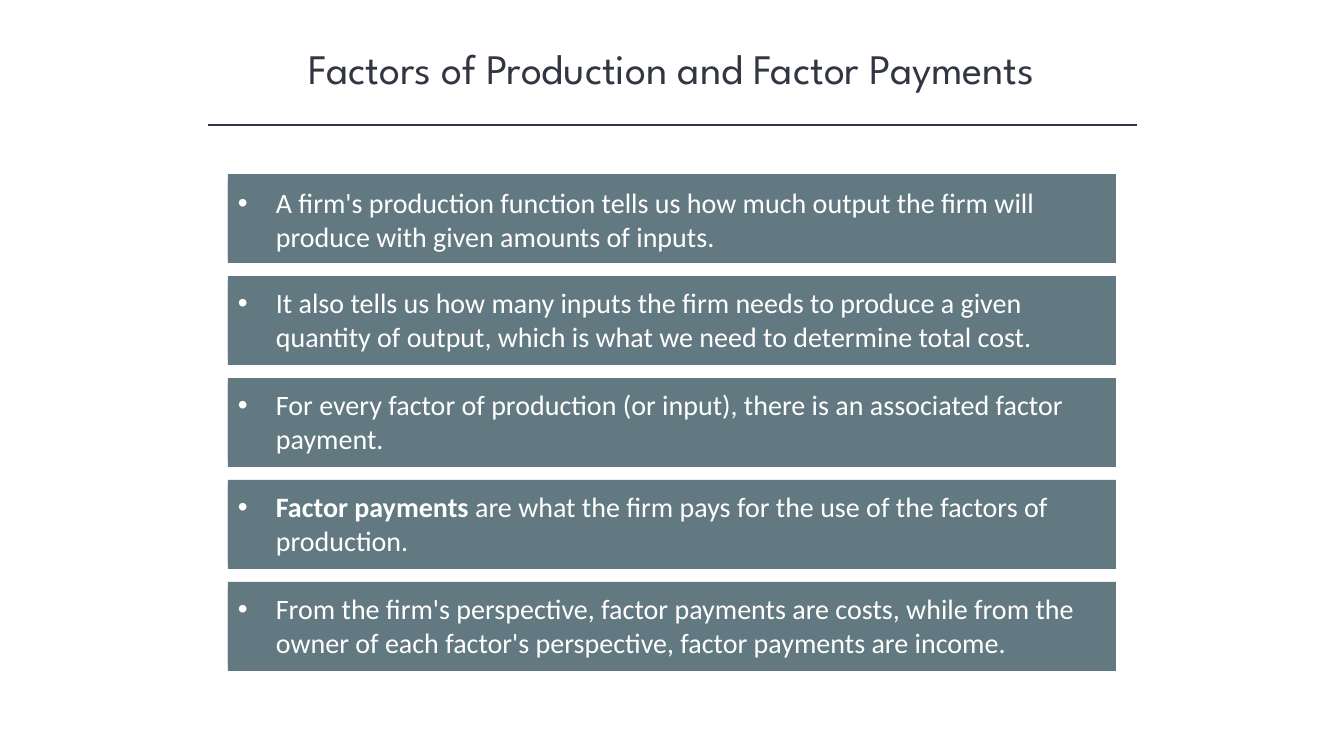
from lxml.etree import SubElement
from pptx import Presentation
from pptx.dml.color import RGBColor
from pptx.enum.shapes import MSO_CONNECTOR, MSO_SHAPE
from pptx.enum.text import MSO_ANCHOR, MSO_AUTO_SIZE, PP_ALIGN
from pptx.oxml.ns import qn
from pptx.util import Emu, Pt

EMU_PER_PX = 914400 / 100.8
INK = RGBColor(0x32, 0x35, 0x42)
SLATE = RGBColor(0x62, 0x79, 0x81)
WHITE = RGBColor(0xFF, 0xFF, 0xFF)


def px(length):
    return Emu(round(length * EMU_PER_PX))


def add_panel(group, left, top, width, height):
    panel = group.shapes.add_shape(
        MSO_SHAPE.RECTANGLE, px(left), px(top), px(width), px(height))
    panel.shadow.inherit = False
    panel.fill.solid()
    panel.fill.fore_color.rgb = SLATE
    panel.line.fill.background()
    return panel


presentation = Presentation()
presentation.slide_width = px(1344)
presentation.slide_height = px(756)
slide = presentation.slides.add_slide(presentation.slide_layouts[5])

# Title
title = slide.shapes.title
title.left, title.top, title.width, title.height = px(168), px(37), px(1008), px(61)
heading = title.text_frame
heading.word_wrap = True
heading.auto_size = MSO_AUTO_SIZE.SHAPE_TO_FIT_TEXT
heading.vertical_anchor = MSO_ANCHOR.TOP
heading_line = heading.paragraphs[0]
heading_line.alignment = PP_ALIGN.CENTER
heading_run = heading_line.add_run()
heading_run.text = "Factors of Production and Factor Payments"
heading_run.font.name = "League Spartan"
heading_run.font.size = Pt(30)
heading_run.font.color.rgb = INK

# Rule under the title
title_rule = slide.shapes.add_connector(
    MSO_CONNECTOR.STRAIGHT, px(208), px(125), px(1137), px(125))
title_rule.line.color.rgb = INK
title_rule.line.width = Pt(1)
SubElement(title_rule._element.spPr, qn("a:effectLst"))

# Statements: distance of the text below the bar's top, then (text, bold) runs
STATEMENTS = [
    (7, [("A firm's production function tells us how much output the firm will "
          "produce with given amounts of inputs.", False)]),
    (5, [("It also tells us how many inputs the firm needs to produce a given "
          "quantity of output, which is what we need to determine total cost.", False)]),
    (5, [("For every factor of production (or input), there is an associated "
          "factor payment.", False)]),
    (5, [("Factor payments ", True),
         ("are what the firm pays for the use of the factors of production.", False)]),
    (5, [("From the firm's perspective, factor payments are costs, while from the "
          "owner of each factor's perspective, factor payments are income.", False)]),
]
BAR_LEFT, FIRST_BAR_TOP, BAR_PITCH = 228, 174, 102

for index, (text_drop, pieces) in enumerate(STATEMENTS):
    bar_top = FIRST_BAR_TOP + index * BAR_PITCH
    statement_group = slide.shapes.add_group_shape()
    add_panel(statement_group, BAR_LEFT, bar_top, 888, 89)
    statement = add_panel(statement_group, BAR_LEFT, bar_top + text_drop, 861, 78)
    statement_text = statement.text_frame
    statement_text.word_wrap = True
    statement_text.auto_size = MSO_AUTO_SIZE.SHAPE_TO_FIT_TEXT
    statement_text.vertical_anchor = MSO_ANCHOR.TOP
    bullet_line = statement_text.paragraphs[0]
    bullet_line.alignment = PP_ALIGN.LEFT

    # Hanging bullet
    bullet_props = bullet_line._p.get_or_add_pPr()
    bullet_props.set("marL", str(px(38)))
    bullet_props.set("indent", str(-px(38)))
    SubElement(bullet_props, qn("a:buFont"), typeface="Arial")
    SubElement(bullet_props, qn("a:buChar"), char="•")

    for words, bold in pieces:
        run = bullet_line.add_run()
        run.text = words
        run.font.name = "Calibri"
        run.font.size = Pt(20)
        run.font.bold = bold
        run.font.color.rgb = WHITE

presentation.save("out.pptx")
